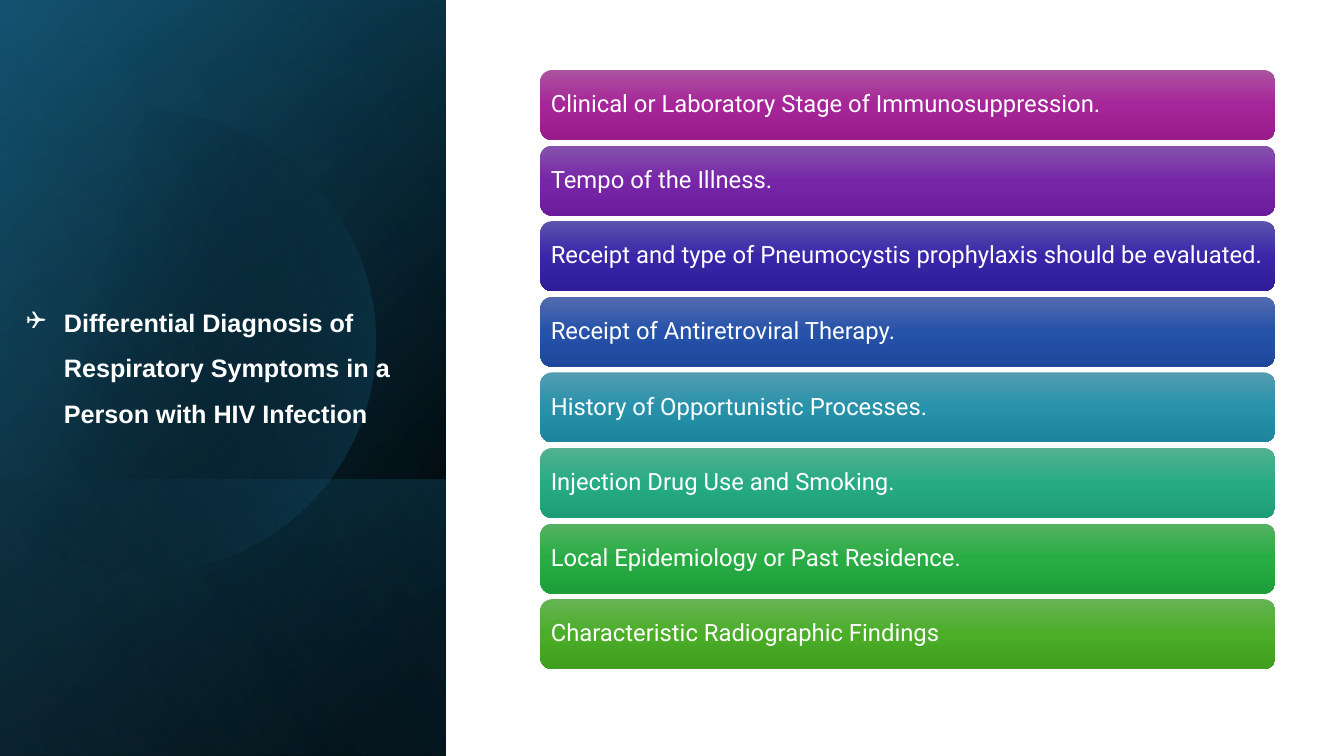
"""Build the slide on differential diagnosis of respiratory symptoms."""
import math

import pptx
import pptx.dml.color
import pptx.enum.shapes
import pptx.enum.text
import pptx.oxml
import pptx.oxml.ns
import pptx.util

Pt = pptx.util.Pt
KINDS = pptx.enum.shapes.MSO_SHAPE
ANCHOR = pptx.enum.text.MSO_ANCHOR
ALIGN = pptx.enum.text.PP_ALIGN
COLORS = {"black": "000000", "navy": "104862", "teal": "156082",
          "sky": "46B1E1", "white": "FFFFFF"}
TITLE = ("Differential Diagnosis of Respiratory Symptoms in a "
         "Person with HIV Infection")
BARS = [
    ("Clinical or Laboratory Stage of Immunosuppression.",
     ("AC53A0", "A62598", "991C8B")),
    ("Tempo of the Illness.", ("8653AD", "7726A7", "6B1C9A")),
    ("Receipt and type of Pneumocystis prophylaxis should be evaluated.",
     ("5C53AE", "3926A8", "2F1C9A")),
    ("Receipt of Antiretroviral Therapy.", ("536BAF", "2652A9", "1D479B")),
    ("History of Opportunistic Processes.", ("539CB0", "2792AA", "1D859C")),
    ("Injection Drug Use and Smoking.", ("53B190", "27AB83", "1D9D77")),
    ("Local Epidemiology or Past Residence.",
     ("54B262", "28AC44", "1E9E3A")),
    ("Characteristic Radiographic Findings",
     ("66B354", "4BAD28", "409F1E")),
]


def shade(shape, stops, angle):
    """Fill a shape with a gradient of (place, colour, opacity) stops."""
    shape.shadow.inherit = False
    shape.line.fill.background()
    shape.fill.background()
    marks = "".join(
        f'<a:gs pos="{place * 1000}"><a:srgbClr val="{color}">'
        f'<a:alpha val="{alpha * 1000}"/></a:srgbClr></a:gs>'
        for place, color, alpha in stops)
    space = pptx.oxml.ns.nsdecls("a")
    grad = pptx.oxml.parse_xml(
        f'<a:gradFill {space} rotWithShape="1"><a:gsLst>{marks}</a:gsLst>'
        f'<a:lin ang="{angle * 60000}" scaled="0"/></a:gradFill>')
    props = shape._element.spPr
    props.replace(props.find(pptx.oxml.ns.qn("a:noFill")), grad)


def add_panel(slide, top, height, stops, angle):
    """Add a turned and mirrored layer of the left panel."""
    width = 318.5
    left, upper = (width - height) / 2, top + (height - width) / 2
    panel = slide.shapes.add_shape(
        KINDS.RECTANGLE, Pt(left), Pt(upper), Pt(height), Pt(width))
    panel.rotation = 90
    panel._element.spPr.xfrm.set("flipH", "1")
    shade(panel, stops, angle)


def add_disc(slide, mid_x, mid_y, radius, stops, angle):
    """Add a disc that is cut off at the left slide edge."""
    limit = math.acos(-mid_x / radius)
    steps = 90
    turns = [limit * (2 * i / steps - 1) for i in range(steps + 1)]
    points = [(Pt(mid_x + radius * math.cos(turn)),
               Pt(mid_y + radius * math.sin(turn))) for turn in turns]
    outline = slide.shapes.build_freeform(*points[0])
    outline.add_line_segments(points[1:], close=True)
    shade(outline.convert_to_shape(), stops, angle)


def write(frame, text, font, size, bold, spacing):
    """Set white left-aligned text and return its paragraph."""
    frame.word_wrap = True
    frame.text = text
    para = frame.paragraphs[0]
    para.alignment = ALIGN.LEFT
    para.line_spacing = spacing
    style = para.runs[0].font
    style.name, style.size, style.bold = font, Pt(size), bold
    style.color.rgb = pptx.dml.color.RGBColor.from_string(COLORS["white"])
    return para


def add_title(slide):
    """Add the title with its hollow square bullet."""
    box = slide.shapes.add_textbox(Pt(11.5), Pt(190), Pt(278.5), Pt(141))
    frame = box.text_frame
    para = write(frame, TITLE, "Arial", 18, True, 1.5)
    frame.vertical_anchor = ANCHOR.BOTTOM
    frame.margin_bottom = Pt(25)
    props = para._p.get_or_add_pPr()
    props.set("marL", str(Pt(27)))
    props.set("indent", str(Pt(-27)))
    space = pptx.oxml.ns.nsdecls("a")
    for mark in ('buFont {} typeface="Wingdings"', 'buChar {} char="❑"'):
        props.append(pptx.oxml.parse_xml(f"<a:{mark.format(space)}/>"))


def add_bar(slide, top, text, tones):
    """Add one rounded bar with its text."""
    bar = slide.shapes.add_shape(
        KINDS.ROUNDED_RECTANGLE, Pt(386), Pt(top), Pt(525), Pt(50))
    shade(bar, [(50 * i, tone, 100) for i, tone in enumerate(tones)], 90)
    frame = bar.text_frame
    write(frame, text, "Roboto", 17, False, 0.9)
    frame.vertical_anchor = ANCHOR.MIDDLE
    frame.margin_left = frame.margin_right = Pt(5)


def main():
    """Build and save the slide."""
    deck = pptx.Presentation()
    deck.slide_width, deck.slide_height = Pt(960), Pt(540)
    slide = deck.slides.add_slide(deck.slide_layouts[6])
    black, teal = COLORS["black"], COLORS["teal"]
    add_panel(slide, 0, 540,
              [(8, black, 100), (100, COLORS["navy"], 100)], 50)
    add_panel(slide, 0, 540, [(0, black, 0), (99, teal, 46)], 30)
    add_panel(slide, 342.5, 197.5, [(2, teal, 29), (100, black, 30)], 130)
    add_disc(slide, 103, 244, 165, [(29, black, 0), (100, teal, 43)], 14)
    add_panel(slide, 0, 540,
              [(0, black, 0), (99, COLORS["sky"], 11)], 120)
    add_title(slide)
    for row, (text, tones) in enumerate(BARS):
        add_bar(slide, 50 + 54 * row, text, tones)
    deck.save("out.pptx")


if __name__ == "__main__":
    main()
